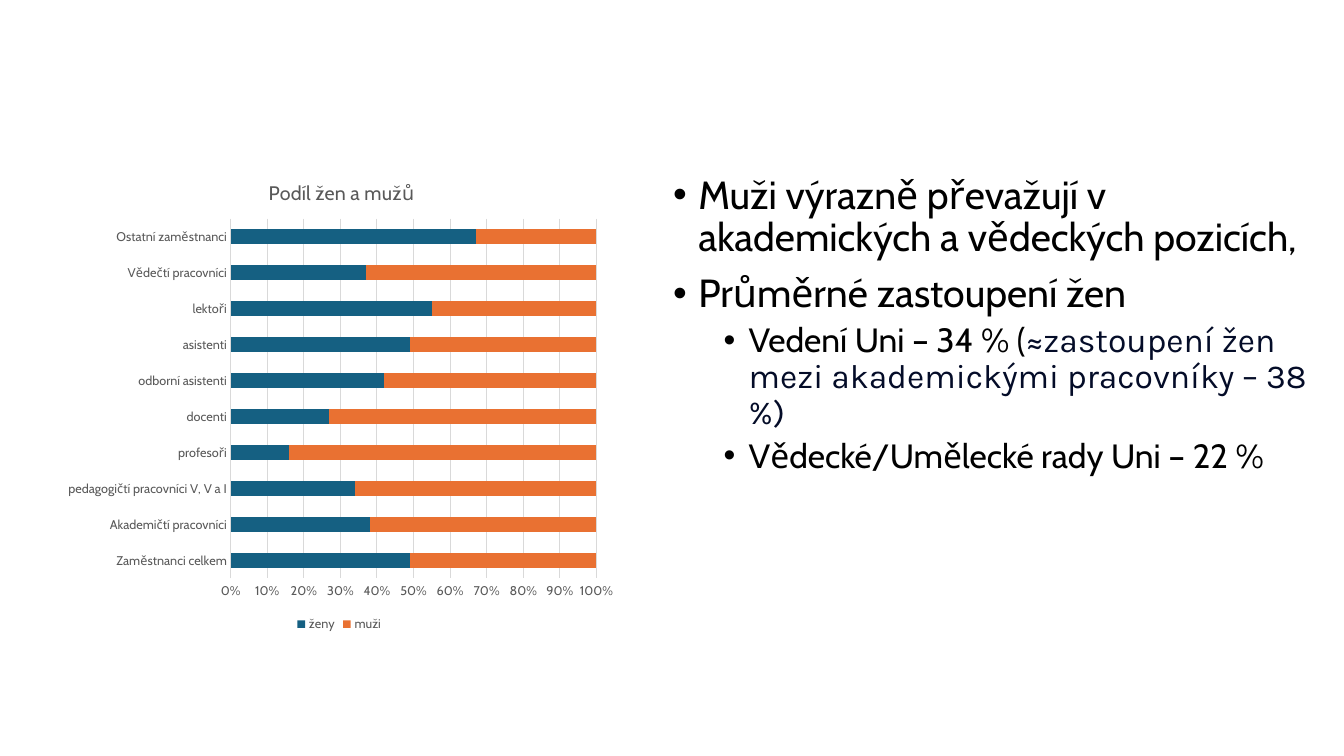
from dataclasses import dataclass
from typing import Any

from lxml.etree import SubElement
from pptx import Presentation
from pptx.chart.data import CategoryChartData
from pptx.dml.color import RGBColor
from pptx.enum.chart import XL_CHART_TYPE as ChartType
from pptx.enum.chart import XL_LEGEND_POSITION as LegendPosition
from pptx.enum.chart import XL_TICK_MARK as TickMark
from pptx.enum.text import MSO_ANCHOR, MSO_AUTO_SIZE, PP_ALIGN
from pptx.oxml import parse_xml
from pptx.oxml.ns import nsdecls, qn
from pptx.util import Cm, Pt

BLACK, GRAY, GRID, NAVY = "000000", "595959", "D9D9D9", "040C28"


@dataclass
class TextRun:
    text: str
    font: str = "Cabin"
    color: str = BLACK


@dataclass
class Bullet:
    level: int
    runs: list[TextRun]


@dataclass
class ShareSeries:
    name: str
    color: str
    values: list[float]


BULLETS = [
    Bullet(0, [TextRun("Muži výrazně převažují v akademických a vědeckých pozicích,")]),
    Bullet(0, [TextRun("Průměrné zastoupení žen")]),
    Bullet(1, [
        TextRun("Vedení Uni – 34 % ("),
        TextRun("≈zastoupení žen mezi akademickými pracovníky – 38 %)", "Karla", NAVY),
    ]),
    Bullet(1, [TextRun("Vědecké/Umělecké rady Uni – 22 %")]),
]
LEVELS = [
    {"size": 28, "space": 10, "margin": Cm(0.635)},
    {"size": 24, "space": 5, "margin": Cm(1.905)},
]
CATEGORIES = [
    "Zaměstnanci celkem", "Akademičtí pracovníci", "pedagogičtí pracovníci V, V a I",
    "profesoři", "docenti", "odborní asistenti", "asistenti", "lektoři",
    "Vědečtí pracovníci", "Ostatní zaměstnanci",
]
WOMEN = [0.49, 0.38, 0.34, 0.16, 0.27, 0.42, 0.49, 0.55, 0.37, 0.67]
SERIES = [
    ShareSeries("ženy", "156082", WOMEN),
    ShareSeries("muži", "E97132", [round(1 - share, 2) for share in WOMEN]),
]


def rgb(value: str) -> RGBColor:
    return RGBColor.from_string(value)


def apply(target: Any, values: dict[str, Any]) -> None:
    for name, value in values.items():
        setattr(target, name, value)


def format_font(font: Any, size: float, color: str, name: str = "Cabin") -> None:
    apply(font, {"size": Pt(size), "name": name, "bold": False})
    font.color.rgb = rgb(color)


def format_line(line: Any, color: str) -> None:
    line.width = Pt(0.75)
    line.color.rgb = rgb(color)


def set_layout(parent: Any, position: int, inner: bool, **fractions: float) -> None:
    for existing in parent.findall(qn("c:layout")):
        parent.remove(existing)
    layout = parse_xml(f"<c:layout {nsdecls('c')}><c:manualLayout/></c:layout>")
    manual = layout[0]
    if inner:
        SubElement(manual, qn("c:layoutTarget")).set("val", "inner")
    for axis in ("xMode", "yMode"):
        SubElement(manual, qn(f"c:{axis}")).set("val", "edge")
    for name, value in fractions.items():
        SubElement(manual, qn(f"c:{name}")).set("val", str(value))
    parent.insert(position, layout)


def add_bullet(paragraph: Any, bullet: Bullet) -> None:
    style = LEVELS[bullet.level]
    apply(paragraph, {
        "level": bullet.level,
        "line_spacing": 0.9,
        "space_before": Pt(style["space"]),
        "space_after": Pt(0),
        "alignment": PP_ALIGN.LEFT,
    })
    properties = paragraph._p.get_or_add_pPr()
    properties.set("marL", str(style["margin"]))
    properties.set("indent", str(-Cm(0.635)))
    SubElement(properties, qn("a:buFont")).set("typeface", "Arial")
    SubElement(properties, qn("a:buChar")).set("char", "•")
    for part in bullet.runs:
        run = paragraph.add_run()
        run.text = part.text
        format_font(run.font, style["size"], part.color, part.font)


def fill_body(body: Any) -> None:
    apply(body, {"left": Cm(16.71), "top": Cm(4.29), "width": Cm(16.56), "height": Cm(12.09)})
    frame = body.text_frame
    apply(frame, {
        "word_wrap": True,
        "auto_size": MSO_AUTO_SIZE.NONE,
        "vertical_anchor": MSO_ANCHOR.TOP,
    })
    for index, bullet in enumerate(BULLETS):
        add_bullet(frame.add_paragraph() if index else frame.paragraphs[0], bullet)


def add_share_chart(slide: Any) -> None:
    data = CategoryChartData(number_format="0%")
    data.categories = CATEGORIES
    for series in SERIES:
        data.add_series(series.name, series.values)
    chart = slide.shapes.add_chart(
        ChartType.BAR_STACKED, Cm(1.35), Cm(3.94), Cm(14.4), Cm(12.09), data
    ).chart
    format_font(chart.font, 10, BLACK)

    title = chart.chart_title
    title.text_frame.text = "Podíl žen a mužů"
    format_font(title.text_frame.paragraphs[0].runs[0].font, 14, GRAY)
    set_layout(title.element, 1, False, x=0.37, y=0.04)
    set_layout(chart.element.find(f".//{qn('c:plotArea')}"), 0, True,
               x=0.31, y=0.13, w=0.64, h=0.75)

    plot = chart.plots[0]
    apply(plot, {"gap_width": 150, "overlap": 100, "vary_by_categories": False})
    for drawn, series in zip(plot.series, SERIES):
        drawn.format.fill.solid()
        drawn.format.fill.fore_color.rgb = rgb(series.color)

    for axis in (chart.category_axis, chart.value_axis):
        apply(axis, {"major_tick_mark": TickMark.NONE, "minor_tick_mark": TickMark.NONE})
        format_font(axis.tick_labels.font, 9, GRAY)
    format_line(chart.category_axis.format.line, GRID)
    shares = chart.value_axis
    apply(shares, {"minimum_scale": 0, "maximum_scale": 1, "major_unit": 0.1,
                   "has_major_gridlines": True})
    apply(shares.tick_labels, {"number_format": "0%", "number_format_is_linked": False})
    format_line(shares.major_gridlines.format.line, GRID)
    shares.format.line.fill.background()

    chart.has_legend = True
    apply(chart.legend, {"position": LegendPosition.BOTTOM, "include_in_layout": False})
    format_font(chart.legend.font, 9, GRAY)


def main() -> None:
    presentation = Presentation()
    apply(presentation, {"slide_width": Cm(33.87), "slide_height": Cm(19.05)})
    slide = presentation.slides.add_slide(presentation.slide_layouts[1])
    title = slide.shapes.title.element
    title.getparent().remove(title)
    fill_body(slide.placeholders[1])
    add_share_chart(slide)
    presentation.save("out.pptx")


if __name__ == "__main__":
    main()
